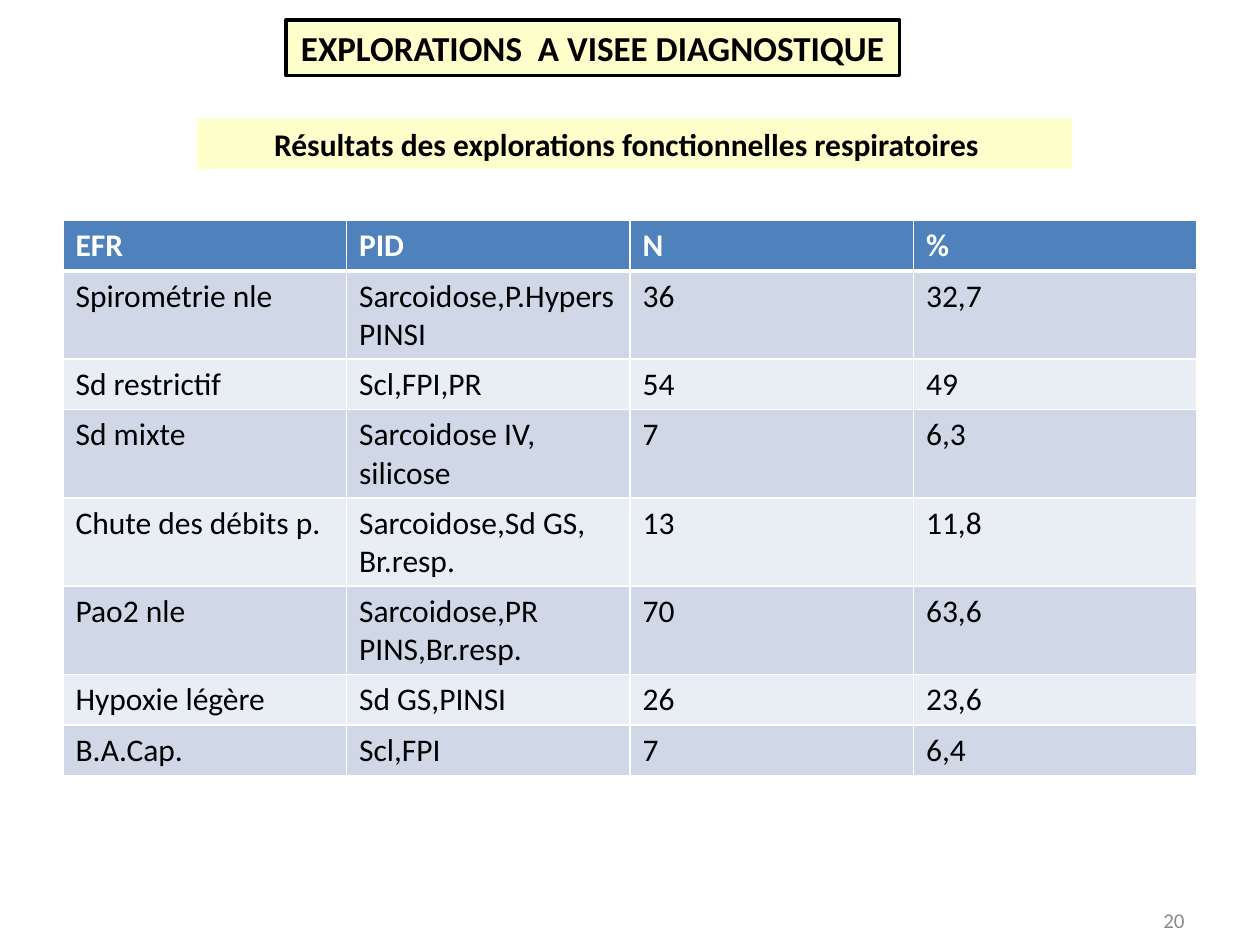
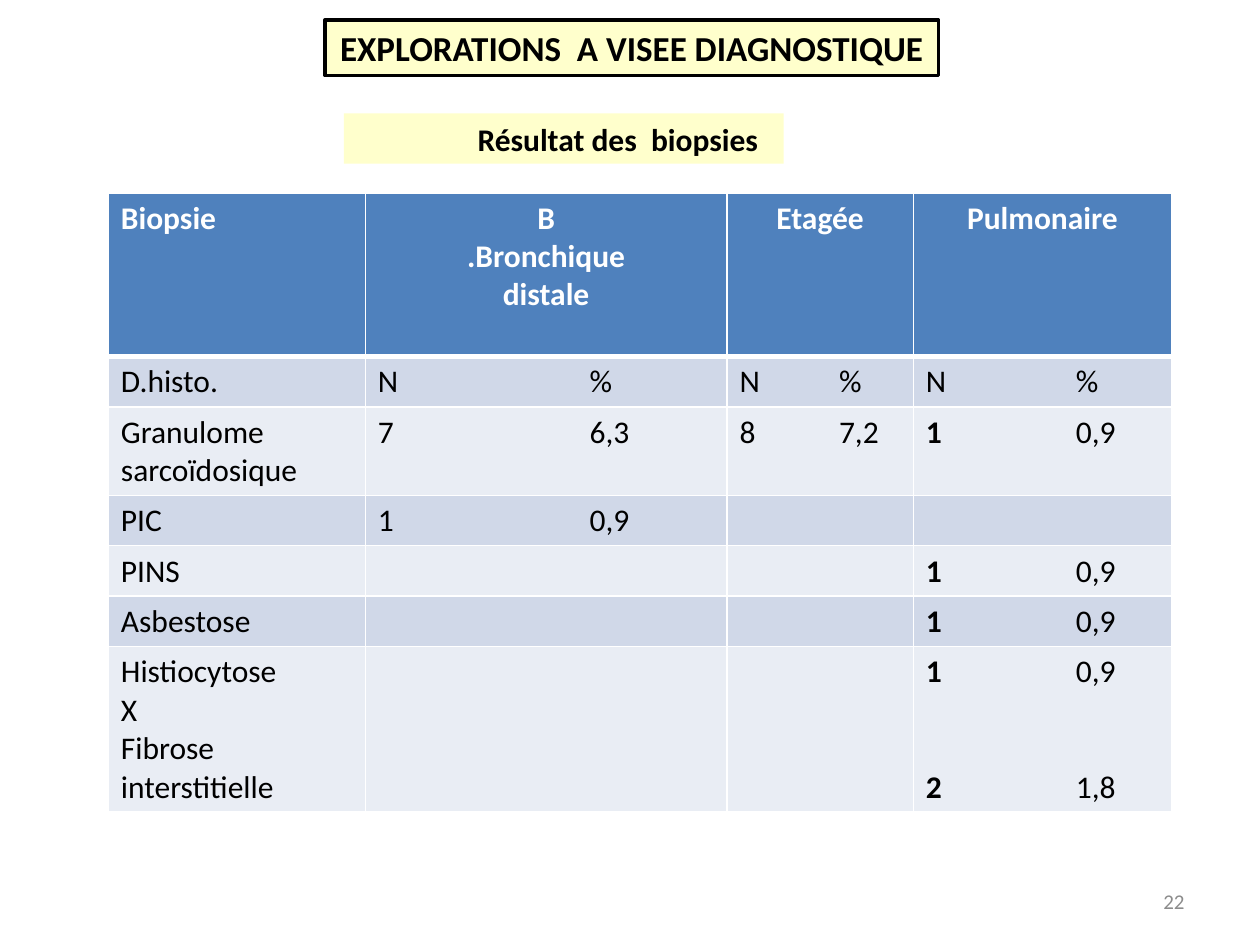
from lxml import etree
from pptx import Presentation
from pptx.dml.color import RGBColor
from pptx.enum.shapes import MSO_SHAPE as Preset
from pptx.enum.text import MSO_ANCHOR as Anchor, PP_ALIGN as Align
from pptx.oxml.ns import qn
from pptx.util import Inches, Pt

# Shared look
FONT = "Calibri"
BLACK, WHITE, GREY = "000000", "FFFFFF", "8C8C8C"
CREAM, HEADER_BLUE = "FFFFCC", "4F81BD"
BANDS = ("D0D8E8", "E9EDF4")
LINE_HEIGHT, CELL_PADDING = 0.3, 0.1
TITLE = "EXPLORATIONS  A VISEE DIAGNOSTIQUE"

# Lung function results
FUNCTION_ROWS = [
    ("EFR", "PID", "N", "%"),
    ("Spirométrie nle", "Sarcoidose,P.Hypers\nPINSI", "36", "32,7"),
    ("Sd restrictif", "Scl,FPI,PR", "54", "49"),
    ("Sd mixte", "Sarcoidose IV,\nsilicose", "7", "6,3"),
    ("Chute des débits p.", "Sarcoidose,Sd GS,\nBr.resp.", "13", "11,8"),
    ("Pao2 nle", "Sarcoidose,PR\nPINS,Br.resp.", "70", "63,6"),
    ("Hypoxie légère", "Sd GS,PINSI", "26", "23,6"),
    ("B.A.Cap.", "Scl,FPI", "7", "6,4"),
]
FUNCTION_LINES = (1, 2, 1, 2, 2, 2, 1, 1)

# Biopsy results: each biopsy type spans an N and a % column
BIOPSY_ROWS = [
    ("Biopsie", "B\n.Bronchique\ndistale", "", "Etagée", "", "Pulmonaire", ""),
    ("D.histo.", "N", "%", "N", "%", "N", "%"),
    ("Granulome sarcoïdosique", "7", "6,3", "8", "7,2", "1", "0,9"),
    ("PIC", "1", "0,9", "", "", "", ""),
    ("PINS", "", "", "", "", "1", "0,9"),
    ("Asbestose", "", "", "", "", "1", "0,9"),
    ("Histiocytose\nX\nFibrose interstitielle", "", "", "", "", "1\n2", "0,9\n1,8"),
]
BIOPSY_LINES = (4, 1, 2, 1, 1, 1, 4)
BIOPSY_WIDTHS = (2.04, 1.68, 1.19, 0.79, 0.69, 1.19, 0.86)
BIOPSY_PAIRS = (1, 3, 5)
LUNG_COUNT_COLUMN = 5
FIBROSIS_GAP = 44


def color(hex_value):
    return RGBColor.from_string(hex_value)


def write(frame, text, size=18, ink=BLACK, bold=False, align=Align.LEFT, gap=0):
    """Fill a text frame, one paragraph per line of text."""
    for index, line in enumerate(text.split("\n")):
        paragraph = frame.paragraphs[0] if index == 0 else frame.add_paragraph()
        paragraph.alignment = align
        if index:
            paragraph.space_before = Pt(gap)
        run = paragraph.add_run()
        run.text = line
        run.font.name, run.font.size, run.font.bold = FONT, Pt(size), bold
        run.font.color.rgb = color(ink)


def add_banner(slide, text, left, top, width, height, outlined=False,
               indent=0.1, right_indent=0.1, **text_format):
    banner = slide.shapes.add_shape(
        Preset.RECTANGLE, Inches(left), Inches(top), Inches(width), Inches(height))
    banner.shadow.inherit = False
    banner.fill.solid()
    banner.fill.fore_color.rgb = color(CREAM)
    if outlined:
        banner.line.color.rgb = color(BLACK)
        banner.line.width = Pt(2)
    else:
        banner.line.fill.background()
    frame = banner.text_frame
    frame.word_wrap = not outlined
    frame.vertical_anchor = Anchor.MIDDLE
    frame.margin_left, frame.margin_right = Inches(indent), Inches(right_indent)
    write(frame, text, bold=True, **text_format)


def add_title(slide, left):
    add_banner(slide, TITLE, left, 0.16, 4.87, 0.44, outlined=True,
               size=20, align=Align.CENTER)


def add_page_number(slide, number, top):
    footer = slide.shapes.add_textbox(
        Inches(7.17), Inches(top), Inches(2.33), Inches(0.4))
    footer.text_frame.word_wrap = True
    footer.text_frame.vertical_anchor = Anchor.MIDDLE
    write(footer.text_frame, str(number), size=12, ink=GREY, align=Align.RIGHT)


def set_borders(cell, **widths):
    """Draw white cell edges; a width of 0 hides the edge."""
    properties = cell._tc.get_or_add_tcPr()
    for position, side in enumerate("LRTB"):
        width = widths.get(side, 1)
        edge = etree.Element(qn(f"a:ln{side}"), w=str(Pt(width)))
        if width:
            paint = etree.SubElement(edge, qn("a:solidFill"))
            etree.SubElement(paint, qn("a:srgbClr"), val=WHITE)
        else:
            etree.SubElement(edge, qn("a:noFill"))
        properties.insert(position, edge)


def add_results(slide, rows, lines, widths, left, top, pairs=(), bold_column=None, gap=0):
    heights = [CELL_PADDING + LINE_HEIGHT * count for count in lines]
    table = slide.shapes.add_table(
        len(rows), len(widths), Inches(left), Inches(top),
        Inches(sum(widths)), Inches(sum(heights))).table
    for column, width in zip(table.columns, widths):
        column.width = Inches(width)
    for row, height in zip(table.rows, heights):
        row.height = Inches(height)
    for first in pairs:
        table.cell(0, first).merge(table.cell(0, first + 1))

    for r, texts in enumerate(rows):
        header = r == 0
        for c, text in enumerate(texts):
            cell = table.cell(r, c)
            cell.fill.solid()
            cell.fill.fore_color.rgb = color(HEADER_BLUE if header else BANDS[(r - 1) % 2])
            set_borders(cell, L=int(c - 1 not in pairs), R=int(c not in pairs or header),
                        T=3 if r == 1 else 1, B=3 if header else 1)
            if text:
                write(cell.text_frame, text,
                      ink=WHITE if header else BLACK,
                      bold=header or (c == bold_column and r > 1),
                      align=Align.CENTER if header and c in pairs else Align.LEFT,
                      gap=gap if c and not header else 0)


def build_function_slide(slide):
    add_banner(slide, "Résultats des explorations fonctionnelles respiratoires",
               1.56, 0.94, 6.95, 0.4, right_indent=0.22, align=Align.CENTER)
    add_page_number(slide, 20, 7.1)
    add_title(slide, 2.27)
    add_results(slide, FUNCTION_ROWS, FUNCTION_LINES, (2.25,) * 4, 0.5, 1.75)


def build_biopsy_slide(slide):
    add_banner(slide, "Résultat des  biopsies", 2.73, 0.9, 3.49, 0.4, indent=1.06)
    add_page_number(slide, 22, 6.95)
    add_title(slide, 2.58)
    add_results(slide, BIOPSY_ROWS, BIOPSY_LINES, BIOPSY_WIDTHS, 0.86, 1.53,
                pairs=BIOPSY_PAIRS, bold_column=LUNG_COUNT_COLUMN, gap=FIBROSIS_GAP)


def main():
    deck = Presentation()
    deck.slide_width, deck.slide_height = Inches(10), Inches(7.5)
    blank = deck.slide_layouts[6]
    for build in (build_function_slide, build_biopsy_slide):
        build(deck.slides.add_slide(blank))
    deck.save("out.pptx")


if __name__ == "__main__":
    main()
